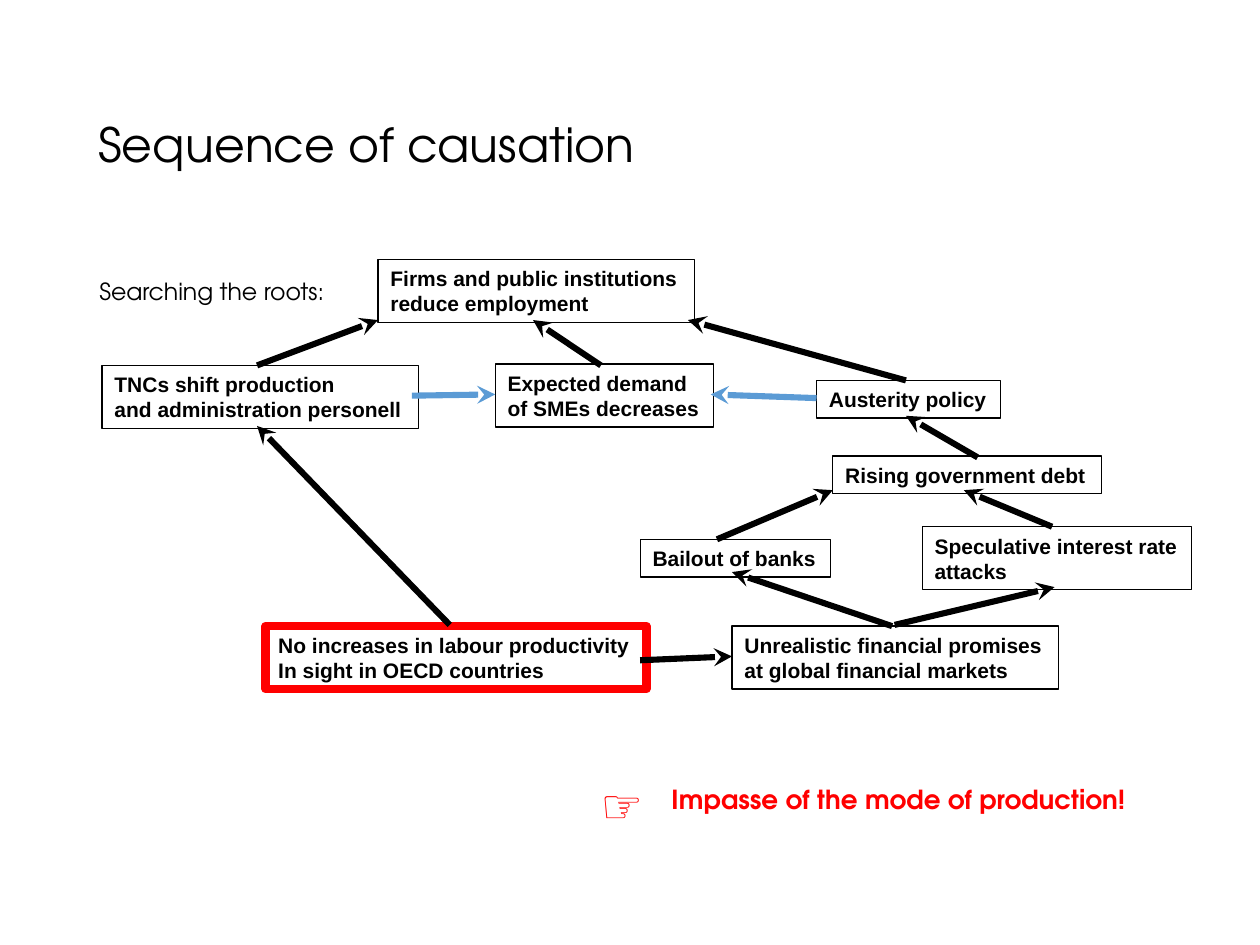
from lxml.etree import SubElement
from pptx import Presentation
from pptx.dml.color import RGBColor
from pptx.enum.shapes import MSO_CONNECTOR, MSO_SHAPE
from pptx.enum.text import MSO_ANCHOR, MSO_AUTO_SIZE, PP_ALIGN
from pptx.oxml.ns import qn
from pptx.util import Pt

BLACK = RGBColor(0x00, 0x00, 0x00)
RED = RGBColor(0xFF, 0x00, 0x00)
BLUE = RGBColor(0x5B, 0x9B, 0xD5)

HEADING_FONT = "TeX Gyre Adventor"
BOX_FONT = "Arial"
LINE_HEIGHT = 14.4
BOX_PADDING = 7.2

# Cause boxes: left, top, width, text
CAUSES = [
    (216, 148.3, 180.7, "Firms and public institutions\nreduce employment"),
    (283, 208.1, 124.6, "Expected demand\nof SMEs decreases"),
    (466.6, 217.4, 105.1, "Austerity policy"),
    (58.3, 208.8, 180.7, "TNCs shift production\nand administration personell"),
    (365.8, 308.2, 108.7, "Bailout of banks"),
    (475.9, 260.6, 153.4, "Rising government debt"),
    (527, 301, 154.1, "Speculative interest rate\nattacks"),
    (418.3, 357.8, 186.5, "Unrealistic financial promises\nat global financial markets"),
]
ROOT_CAUSE = (151.9, 357.8, 217.4,
              "No increases in labour productivity\nIn sight in OECD countries")

# Arrows: start x, start y, end x, end y
MAIN_EFFECTS = [
    (146.9, 208.8, 216, 182.9),      # TNCs to employment
    (365.8, 377.3, 418.3, 375.1),    # productivity to promises
    (509.8, 357.8, 418.3, 326.9),    # promises to bailout
    (511.2, 357.1, 602.6, 335.5),    # promises to attacks
    (601.2, 301, 550.8, 280.1),      # attacks to debt
    (409.7, 308.2, 475.9, 280.1),    # bailout to debt
    (558.7, 261.4, 517.7, 237.6),    # debt to austerity
    (517.7, 217.4, 393.1, 182.9),    # austerity to employment
    (343.4, 208.8, 304.6, 182.9),    # demand to employment
    (257, 357.1, 146.9, 243.4),      # productivity to TNCs
]
SIDE_EFFECTS = [
    (235.4, 226.1, 283, 225.4),      # TNCs to demand
    (466.6, 227.5, 406.1, 225.4),    # austerity to demand
]


def format_text(frame, font, size, color=BLACK, bold=False):
    for paragraph in frame.paragraphs:
        paragraph.alignment = PP_ALIGN.LEFT
        for run in paragraph.runs:
            run.font.name = font
            run.font.size = Pt(size)
            run.font.bold = bold
            run.font.color.rgb = color


def add_title(slide, text):
    title = slide.shapes.title
    title.left, title.top, title.width, title.height = map(Pt, (49, 59, 620.6, 49.7))
    frame = title.text_frame
    frame.text = text
    frame.vertical_anchor = MSO_ANCHOR.MIDDLE
    frame.paragraphs[0].line_spacing = 0.9
    format_text(frame, HEADING_FONT, 27)


def add_label(slide, place, text, size, color=BLACK, bold=False, wrap=False):
    frame = slide.shapes.add_textbox(*map(Pt, place)).text_frame
    frame.text = text
    frame.word_wrap = wrap
    frame.auto_size = MSO_AUTO_SIZE.SHAPE_TO_FIT_TEXT
    format_text(frame, HEADING_FONT, size, color, bold)


def add_cause(slide, left, top, width, text, color=BLACK, weight=0.75):
    height = BOX_PADDING + LINE_HEIGHT * len(text.splitlines())
    cause = slide.shapes.add_shape(
        MSO_SHAPE.RECTANGLE, *map(Pt, (left, top, width, height)))
    cause.shadow.inherit = False
    cause.fill.background()
    cause.line.color.rgb = color
    cause.line.width = Pt(weight)
    frame = cause.text_frame
    frame.text = text
    frame.word_wrap = False
    frame.auto_size = MSO_AUTO_SIZE.SHAPE_TO_FIT_TEXT
    format_text(frame, BOX_FONT, 12, bold=True)


def add_arrow(slide, ends, color):
    arrow = slide.shapes.add_connector(MSO_CONNECTOR.STRAIGHT, *map(Pt, ends))
    arrow.line.color.rgb = color
    arrow.line.width = Pt(3.5)
    SubElement(arrow.line._get_or_add_ln(), qn("a:tailEnd"), type="stealth")
    SubElement(arrow._element.spPr, qn("a:effectLst"))


def main():
    deck = Presentation()
    deck.slide_width, deck.slide_height = Pt(720), Pt(540)
    slide = deck.slides.add_slide(deck.slide_layouts[5])

    # Headings
    add_title(slide, "Sequence of causation")
    add_label(slide, (49.7, 154.8, 148.3, 23.8), "Searching the roots:", 13.5)

    # Causes
    for cause in CAUSES:
        add_cause(slide, *cause)
    add_cause(slide, *ROOT_CAUSE, color=RED, weight=5)

    # Effects
    for ends in MAIN_EFFECTS:
        add_arrow(slide, ends, BLACK)
    for ends in SIDE_EFFECTS:
        add_arrow(slide, ends, BLUE)

    # Conclusion
    add_label(slide, (376.6, 444.2, 301, 25.2),
              "Impasse of the mode of production!", 15, RED, bold=True, wrap=True)
    add_label(slide, (336.2, 439.9, 40.3, 40.3), "☞", 27, RED, bold=True)

    deck.save("out.pptx")


if __name__ == "__main__":
    main()
